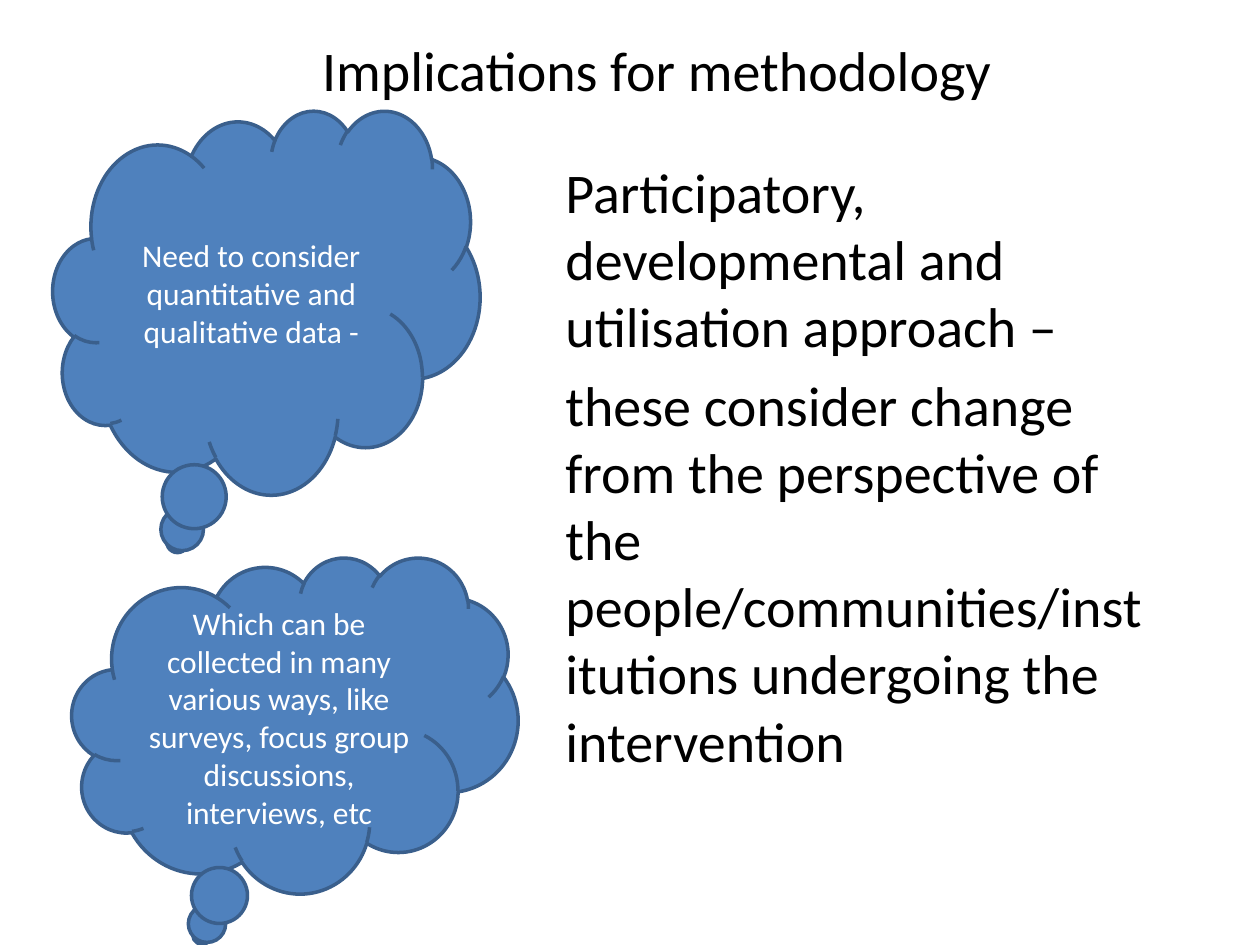
import pptx
import pptx.dml.color
import pptx.enum.shapes
import pptx.enum.text
import pptx.util

PX_PER_INCH = 126
SLIDE = (1260, 945)
FONT = "Calibri"
BLACK, WHITE, BLUE, NAVY = "000000", "FFFFFF", "4F81BD", "3A5F8C"

TITLE = ("Implications for methodology", (86, 28, 1142, 82))
CLOUDS = [
    ("Need to consider quantitative and qualitative data -",
     (53, 110, 427, 384)),
    ("Which can be collected in many various ways, like surveys, "
     "focus group discussions, interviews, etc",
     (72, 557, 446, 336)),
]
BODY = ([
    "Participatory, developmental and utilisation approach –",
    "these consider change from the perspective of the "
    "people/communities/institutions undergoing the intervention",
], (553, 151, 605, 580))

ALIGN = pptx.enum.text.PP_ALIGN
ANCHOR = pptx.enum.text.MSO_ANCHOR


def px(n):
    return pptx.util.Emu(round(n * 914400 / PX_PER_INCH))


def rgb(value):
    return pptx.dml.color.RGBColor.from_string(value)


def write(s, paragraphs, size=32, color=BLACK, align=ALIGN.LEFT,
          anchor=ANCHOR.TOP, gap=0):
    """Fill a shape with paragraphs; gap is the space between them in points."""
    tf = s.text_frame
    tf.word_wrap = True
    tf.auto_size = pptx.enum.text.MSO_AUTO_SIZE.NONE
    tf.vertical_anchor = anchor
    for i, text in enumerate(paragraphs):
        p = tf.add_paragraph() if i else tf.paragraphs[0]
        p.alignment = align
        p.space_before = pptx.util.Pt(gap if i else 0)
        r = p.add_run()
        r.text = text
        r.font.name = FONT
        r.font.size = pptx.util.Pt(size)
        r.font.color.rgb = rgb(color)


def add_cloud(slide, text, box):
    s = slide.shapes.add_shape(
        pptx.enum.shapes.MSO_SHAPE.CLOUD_CALLOUT, *map(px, box))
    s.shadow.inherit = False
    s.fill.solid()
    s.fill.fore_color.rgb = rgb(BLUE)
    s.line.color.rgb = rgb(NAVY)
    s.line.width = pptx.util.Pt(2)
    write(s, [text], size=18, color=WHITE, align=ALIGN.CENTER,
          anchor=ANCHOR.MIDDLE)


def main():
    prs = pptx.Presentation()
    prs.slide_width, prs.slide_height = map(px, SLIDE)
    slide = prs.slides.add_slide(prs.slide_layouts.get_by_name("Title Only"))

    text, box = TITLE
    title = slide.shapes.title
    title.left, title.top, title.width, title.height = map(px, box)
    write(title, [text], align=ALIGN.CENTER, anchor=ANCHOR.MIDDLE)

    for text, box in CLOUDS:
        add_cloud(slide, text, box)

    paragraphs, box = BODY
    write(slide.shapes.add_textbox(*map(px, box)), paragraphs, gap=6.4)

    prs.save("out.pptx")


if __name__ == "__main__":
    main()
